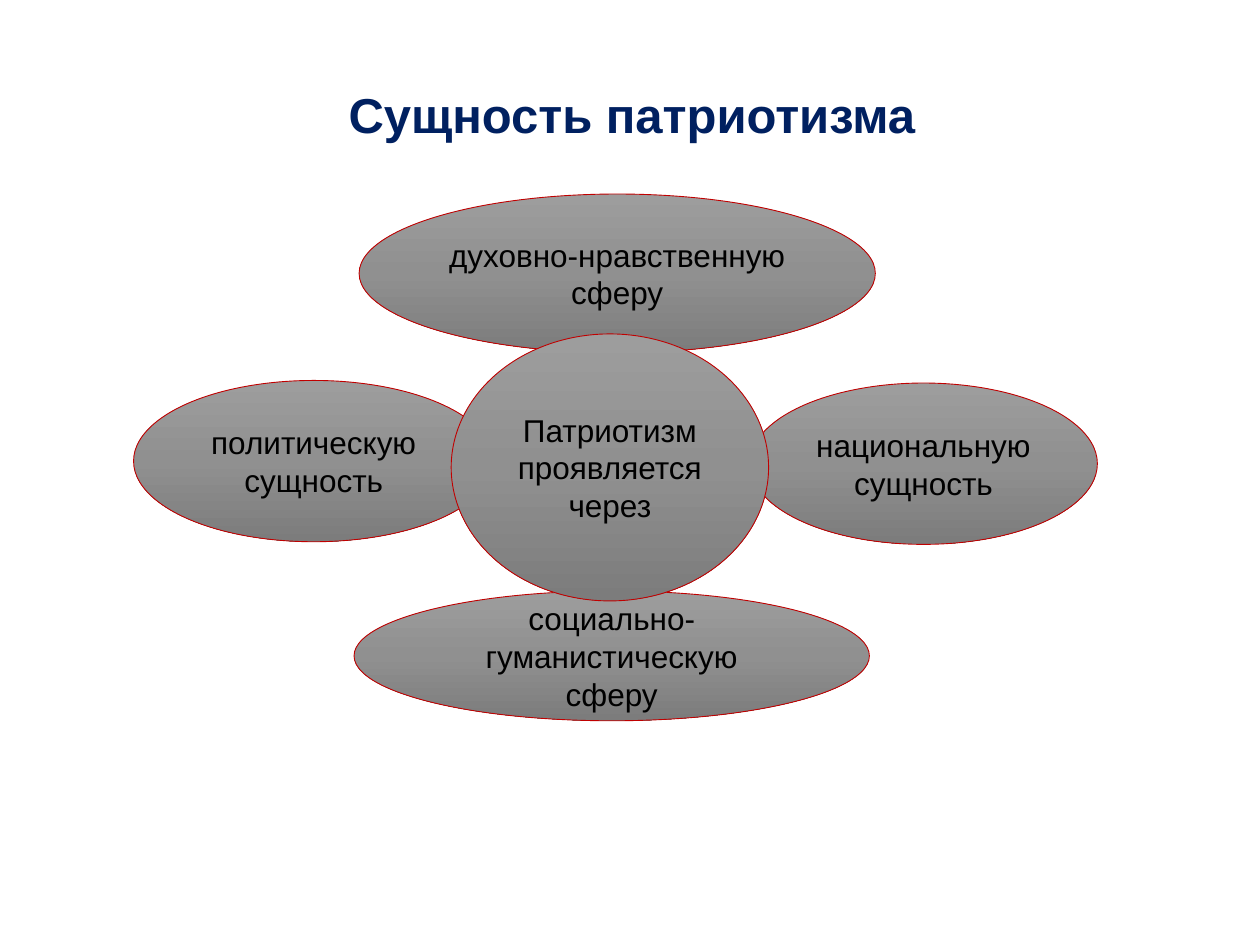
"""Build a slide on the essence of patriotism: a central circle and four spheres."""
from copy import deepcopy

from pptx import Presentation
from pptx.dml.color import RGBColor
from pptx.enum import shapes, text
from pptx.util import Pt

TITLE = ("Сущность патриотизма", (54, 21.6, 614.2, 90.7))
ELLIPSES = [
    ("духовно-нравственную сферу", (205.2, 110.9, 295, 90.7)),
    ("политическую сущность", (76.3, 217.4, 206, 92.2)),
    ("социально-гуманистическую сферу", (202.3, 337.7, 294.5, 74.2)),
    ("национальную сущность", (428.4, 218.9, 198.7, 92.2)),
    ("Патриотизм проявляется через", (257.8, 190.8, 181.4, 152.6)),
]
GRADIENT = [(0, "9D9D9D"), (0.5, "909090"), (1, "7C7C7C")]


def rgb(value):
    return RGBColor.from_string(value)


def write(s, content, size=18, color="000000", bold=False, spacing=1.0):
    tf = s.text_frame
    tf.word_wrap = True
    tf.vertical_anchor = text.MSO_ANCHOR.MIDDLE
    p = tf.paragraphs[0]
    p.alignment = text.PP_ALIGN.CENTER
    p.line_spacing = spacing
    r = p.add_run()
    r.text = content
    r.font.name = "Arial"
    r.font.size = Pt(size)
    r.font.bold = bold
    r.font.color.rgb = rgb(color)


def shade(s):
    s.fill.gradient()
    s.fill.gradient_angle = 270
    stops = s.fill._fill._gradFill.gsLst
    stops.append(deepcopy(stops[-1]))
    for stop, (position, color) in zip(s.fill.gradient_stops, GRADIENT):
        stop.position = position
        stop.color.rgb = rgb(color)


def add_ellipse(slide, content, box):
    s = slide.shapes.add_shape(shapes.MSO_SHAPE.OVAL, *map(Pt, box))
    s.shadow.inherit = False
    shade(s)
    s.line.color.rgb = rgb("C00000")
    s.line.width = Pt(0.5)
    write(s, content)


def main():
    prs = Presentation()
    prs.slide_width, prs.slide_height = Pt(720), Pt(540)
    slide = prs.slides.add_slide(prs.slide_layouts[6])
    content, box = TITLE
    title = slide.shapes.add_textbox(*map(Pt, box))
    write(title, content, size=28, color="002060", bold=True, spacing=0.9)
    for content, box in ELLIPSES:
        add_ellipse(slide, content, box)
    prs.save("out.pptx")


if __name__ == "__main__":
    main()
